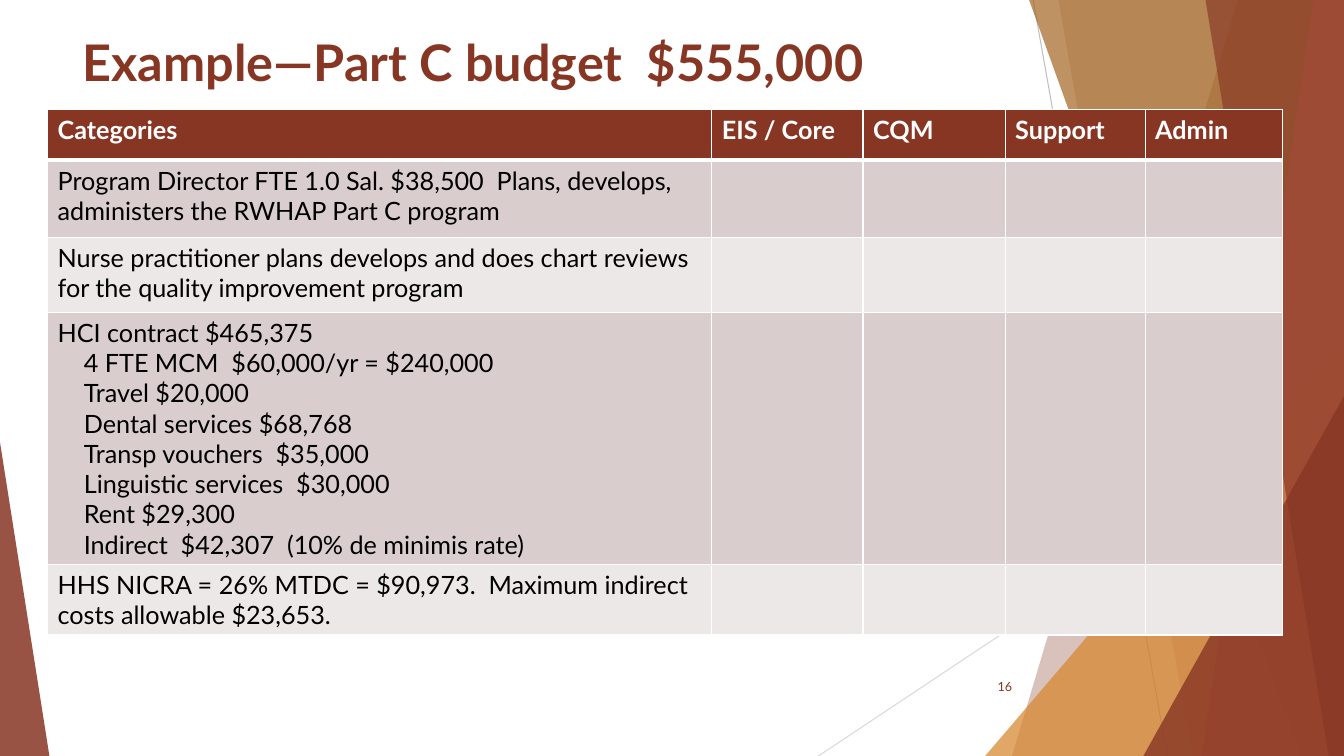
from collections import namedtuple
from dataclasses import dataclass
from lxml import etree
from pptx import Presentation
from pptx.dml.color import RGBColor as RGB
from pptx.enum.shapes import MSO_CONNECTOR as CONN, MSO_SHAPE as SHAPE
from pptx.enum.text import MSO_ANCHOR as ANCHOR, PP_ALIGN as ALIGN
from pptx.oxml.ns import qn
from pptx.util import Pt

Box = namedtuple("Box", "x y w h")


@dataclass(frozen=True)
class Theme:
    """Colours, font and type sizes of the deck."""
    font: str = "Lato"
    brick: str = "873624"
    amber: str = "D6862D"
    bronze: str = "A36520"
    coral: str = "D4745E"
    white: str = "FFFFFF"
    black: str = "000000"
    band_dark: str = "D9CECD"
    band_light: str = "EDE8E8"
    rule_dark: str = "BFBFBF"
    rule_light: str = "D9D9D9"
    title: int = 36
    body: int = 18
    number: int = 9


T = Theme()
COLUMNS = [474.5, 108, 101.5, 100, 98]
ROWS = [36, 55.4, 53.3, 180, 50.4]
CELLS = [
    ["Categories", "EIS / Core", "CQM", "Support", "Admin"],
    ["Program Director FTE 1.0 Sal. $38,500  Plans, develops, "
     "administers the RWHAP Part C program"],
    ["Nurse practitioner plans develops and does chart reviews "
     "for the quality improvement program"],
    ["HCI contract $465,375\n4 FTE MCM  $60,000/yr = $240,000\nTravel $20,000\n"
     "Dental services $68,768\nTransp vouchers  $35,000\nLinguistic services  $30,000\n"
     "Rent $29,300\nIndirect  $42,307  (10% de minimis rate)"],
    ["HHS NICRA = 26% MTDC = $90,973.  Maximum indirect costs allowable $23,653."],
]


def apply(obj, values):
    """Set every attribute named in a dict of format values."""
    for name, value in values.items():
        setattr(obj, name, value)


def write(p, text, size, color, bold=False):
    """Add one formatted run to a paragraph."""
    r = p.add_run()
    r.text = text
    apply(r.font, {"name": T.font, "size": Pt(size), "bold": bold})
    r.font.color.rgb = RGB.from_string(color)


def paint(sp, color, opacity):
    """Give a shape a translucent fill without outline or shadow."""
    sp.shadow.inherit = False
    sp.line.fill.background()
    sp.fill.solid()
    sp.fill.fore_color.rgb = RGB.from_string(color)
    clr = sp.fill._xPr.find(qn("a:solidFill"))[0]
    etree.SubElement(clr, qn("a:alpha"), val=str(opacity * 1000))


def rule(s, start, end, color):
    """Draw a thin straight line between two points."""
    line = s.shapes.add_connector(CONN.STRAIGHT, *map(Pt, start + end))
    line.line.color.rgb = RGB.from_string(color)
    line.line.width = Pt(0.75)
    etree.SubElement(line._element.spPr, qn("a:effectLst"))


def wedge(s, box, top, bottom, color, opacity):
    """Fill the right part of a box, from a slanted left edge."""
    right, base = box.x + box.w, box.y + box.h
    corners = [(right, box.y), (right, base), (box.x + bottom, base)]
    builder = s.shapes.build_freeform(Pt(box.x + top), Pt(box.y))
    builder.add_line_segments([(Pt(x), Pt(y)) for x, y in corners])
    paint(builder.convert_to_shape(), color, opacity)


def corner(s, box, apex, w, h, color, opacity):
    """Place a right triangle in a lower corner of a box; apex 0 left, 1 right."""
    x, y = box.x + apex * (box.w - w), box.y + box.h - h
    sp = s.shapes.add_shape(SHAPE.ISOSCELES_TRIANGLE, Pt(x), Pt(y), Pt(w), Pt(h))
    sp.adjustments[0] = apex
    paint(sp, color, opacity)


def backdrop(s, box):
    """Draw the faceted background from back to front."""
    x, y, w, h = box
    rule(s, (x + 738, y), (x + 833.8, y + h), T.rule_dark)
    rule(s, (x + w, y + 290.2), (x + 584.6, y + h), T.rule_light)
    facets = [
        (wedge, 884.2, 722.9, T.brick, 30),
        (wedge, 756, 851.8, T.brick, 20),
        (corner, 1, 256.3, 300, T.amber, 72),
        (wedge, 735.1, 929.5, T.bronze, 70),
        (wedge, 938.2, 858.2, T.coral, 70),
        (wedge, 861.1, 949, T.brick, 65),
        (corner, 1, 143.3, 257, T.brick, 80),
        (corner, 0, 35.3, 224, T.brick, 85),
    ]
    for draw, *values in facets:
        draw(s, box, *values)


def label(s, box, text, size, bold=False, anchor=ANCHOR.TOP, align=ALIGN.LEFT):
    """Place one line of brick-coloured text in a box."""
    tf = s.shapes.add_textbox(*map(Pt, box)).text_frame
    apply(tf, {"word_wrap": True, "vertical_anchor": anchor})
    p = tf.paragraphs[0]
    p.alignment = align
    write(p, text, size, T.brick, bold)


def cell_style(cell, fill, top, bottom):
    """Set the white borders and the fill of a cell."""
    tcPr = cell._tc.get_or_add_tcPr()
    for side, width in zip("LRTB", (1, 1, top, bottom)):
        ln = etree.SubElement(tcPr, qn(f"a:ln{side}"), w=str(Pt(width)))
        solid = etree.SubElement(ln, qn("a:solidFill"))
        etree.SubElement(solid, qn("a:srgbClr"), val=T.white)
    cell.fill.solid()
    cell.fill.fore_color.rgb = RGB.from_string(fill)


def cell_text(cell, text, color, bold):
    """Write the lines of a cell, indenting all after the first."""
    tf = cell.text_frame
    for i, line in enumerate(text.split("\n")):
        p = tf.add_paragraph() if i else tf.paragraphs[0]
        if i:
            p.level = 1
            p._p.get_or_add_pPr().set("marL", str(Pt(18.7)))
        write(p, line, T.body, color, bold)


def budget_table(s, box):
    """Build the budget table in a box."""
    table = s.shapes.add_table(len(ROWS), len(COLUMNS), *map(Pt, box)).table
    for col, width in zip(table.columns, COLUMNS):
        col.width = Pt(width)
    for i, (row, height) in enumerate(zip(table.rows, ROWS)):
        row.height = Pt(height)
        head = i == 0
        fill = T.brick if head else (T.band_light, T.band_dark)[i % 2]
        for j, cell in enumerate(row.cells):
            cell_style(cell, fill, 3 if i == 1 else 1, 3 if head else 1)
            if j < len(CELLS[i]):
                cell_text(cell, CELLS[i][j], T.white if head else T.black, head)


def budget_slide(prs, box):
    """Compose the budget slide."""
    s = prs.slides.add_slide(prs.slide_layouts[6])
    x, y, w, h = box
    backdrop(s, box)
    label(s, Box(x + 52, y + 18.7, 677, 58.3), "Example—Part C budget  $555,000",
          T.title, bold=True)
    budget_table(s, Box(x + 34, y + 78.5, sum(COLUMNS), sum(ROWS)))
    label(s, Box(x + 676, y + 476, 54, 28.8), "16", T.number,
          anchor=ANCHOR.MIDDLE, align=ALIGN.RIGHT)


def main():
    """Create and save the deck."""
    prs = Presentation()
    apply(prs, {"slide_width": Pt(960), "slide_height": Pt(540)})
    budget_slide(prs, Box(0, 0, 960, 540))
    prs.save("out.pptx")


if __name__ == "__main__":
    main()
